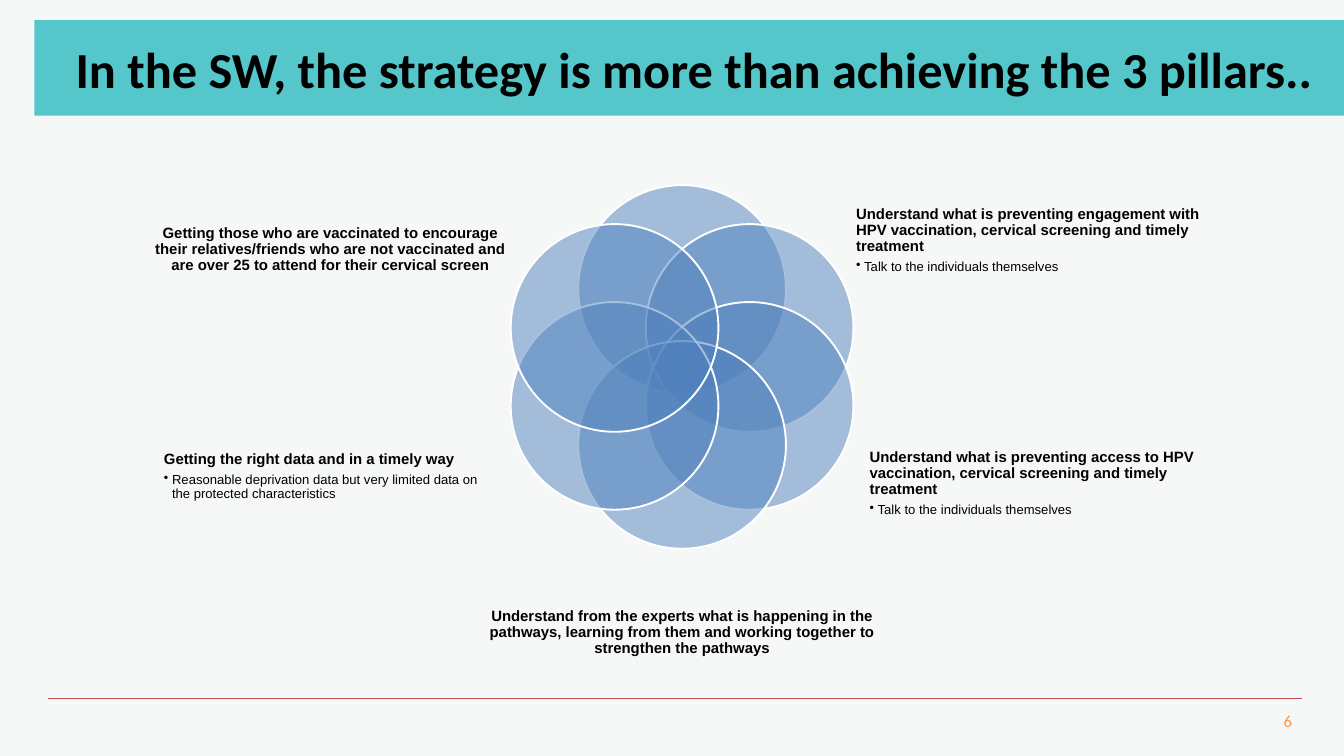
from math import cos, radians, sin

from lxml.etree import SubElement
from pptx import Presentation
from pptx.dml.color import RGBColor
from pptx.enum.shapes import MSO_CONNECTOR, MSO_SHAPE
from pptx.enum.text import MSO_ANCHOR, PP_ALIGN
from pptx.oxml.ns import qn
from pptx.util import Inches, Pt

TITLE = "In the SW, the strategy is more than achieving the 3 pillars.."
PAGE_NUMBER = "6"

# heading, bullet, alignment, (left, top, width, height)
THEMES = [
    ("Understand what is preventing engagement with HPV vaccination, "
     "cervical screening and timely treatment",
     "Talk to the individuals themselves",
     PP_ALIGN.LEFT, (12.74, 2.43, 5.18, 2.3)),
    ("Understand what is preventing access to HPV vaccination, "
     "cervical screening and timely treatment",
     "Talk to the individuals themselves",
     PP_ALIGN.LEFT, (12.94, 5.91, 4.98, 2.57)),
    ("Understand from the experts what is happening in the pathways, "
     "learning from them and working together to strengthen the pathways",
     None, PP_ALIGN.CENTER, (6.96, 8.36, 6.38, 2.1)),
    ("Getting the right data and in a timely way",
     "Reasonable deprivation data but very limited data on "
     "the protected characteristics",
     PP_ALIGN.LEFT, (2.44, 5.81, 4.97, 2.57)),
    ("Getting those who are vaccinated to encourage their relatives/friends "
     "who are not vaccinated and are over 25 to attend for their cervical screen",
     None, PP_ALIGN.CENTER, (2.26, 2.43, 5.31, 2.57)),
]

CIRCLE_COUNT = 6
CIRCLE_SIZE = 3.09
RING_CENTER = (10.15, 5.46)
RING_RADIUS = 1.16
BULLET_INDENT = Inches(0.12)


def rgb(color):
    return RGBColor.from_string(color)


def box(left, top, width, height):
    return [Inches(value) for value in (left, top, width, height)]


def prepare_frame(frame, anchor=MSO_ANCHOR.MIDDLE, left_inset=0, wrap=True):
    frame.word_wrap = wrap
    frame.vertical_anchor = anchor
    frame.margin_left = Inches(left_inset)
    frame.margin_top = frame.margin_right = frame.margin_bottom = 0
    return frame


def write(paragraph, text, size, font="Arial", color="000000", bold=False,
          align=PP_ALIGN.LEFT, line_spacing=None, after=0, bullet=False):
    paragraph.alignment = align
    paragraph.space_after = Pt(after)
    if line_spacing:
        paragraph.line_spacing = line_spacing
    if bullet:
        paragraph.level = 1
        properties = paragraph._p.get_or_add_pPr()
        properties.set("marL", str(BULLET_INDENT))
        properties.set("indent", str(-BULLET_INDENT))
        SubElement(properties, qn("a:buChar"), char="•")
    run = paragraph.add_run()
    run.text = text
    run.font.size = Pt(size)
    run.font.name = font
    run.font.bold = bold
    run.font.color.rgb = rgb(color)


def add_filled(slide, preset, bounds, color):
    shape = slide.shapes.add_shape(preset, *box(*bounds))
    shape.shadow.inherit = False
    shape.fill.solid()
    shape.fill.fore_color.rgb = rgb(color)
    shape.line.fill.background()
    return shape


def add_circle(slide, angle):
    """Add one translucent circle of the ring, at degrees clockwise from the top."""
    left = RING_CENTER[0] + RING_RADIUS * sin(radians(angle)) - CIRCLE_SIZE / 2
    top = RING_CENTER[1] - RING_RADIUS * cos(radians(angle)) - CIRCLE_SIZE / 2
    circle = add_filled(slide, MSO_SHAPE.OVAL,
                        (left, top, CIRCLE_SIZE, CIRCLE_SIZE), "4F81BD")
    fill_color = circle._element.spPr.find(qn("a:solidFill")).find(qn("a:srgbClr"))
    SubElement(fill_color, qn("a:alpha"), val="50000")
    circle.line.color.rgb = rgb("FFFFFF")
    circle.line.width = Pt(2)


def add_theme(slide, heading, detail, align, bounds):
    frame = prepare_frame(slide.shapes.add_textbox(*box(*bounds)).text_frame)
    write(frame.paragraphs[0], heading, 16, bold=True, align=align,
          line_spacing=0.9, after=5.6)
    if detail:
        write(frame.add_paragraph(), detail, 14, line_spacing=0.9, after=2.1,
              bullet=True)


def add_title(slide):
    banner = add_filled(slide, MSO_SHAPE.RECTANGLE, (0.51, 0.3, 19.49, 1.42), "55C6C9")
    frame = prepare_frame(banner.text_frame, left_inset=0.16)
    write(frame.paragraphs[0], TITLE, 54, font="Calibri", bold=True,
          align=PP_ALIGN.CENTER)


def add_footer(slide):
    rule = slide.shapes.add_connector(MSO_CONNECTOR.STRAIGHT,
                                      *box(0.71, 10.39, 19.37, 10.39))
    rule.line.color.rgb = rgb("C0504D")
    rule.line.width = Pt(0.5)
    SubElement(rule._element.spPr, qn("a:effectLst"))

    number = slide.shapes.add_textbox(*box(18.77, 10.58, 0.46, 0.31))
    frame = prepare_frame(number.text_frame, anchor=MSO_ANCHOR.TOP)
    write(frame.paragraphs[0], PAGE_NUMBER, 18, font="Calibri", color="F79646",
          align=PP_ALIGN.RIGHT)


def main():
    deck = Presentation()
    deck.slide_width, deck.slide_height = Inches(20), Inches(11.25)
    slide = deck.slides.add_slide(deck.slide_layouts[6])
    slide.background.fill.solid()
    slide.background.fill.fore_color.rgb = rgb("F6F8F8")

    add_footer(slide)
    for position in range(CIRCLE_COUNT):
        add_circle(slide, position * 360 / CIRCLE_COUNT)
    for theme in THEMES:
        add_theme(slide, *theme)
    add_title(slide)
    deck.save("out.pptx")


if __name__ == "__main__":
    main()
